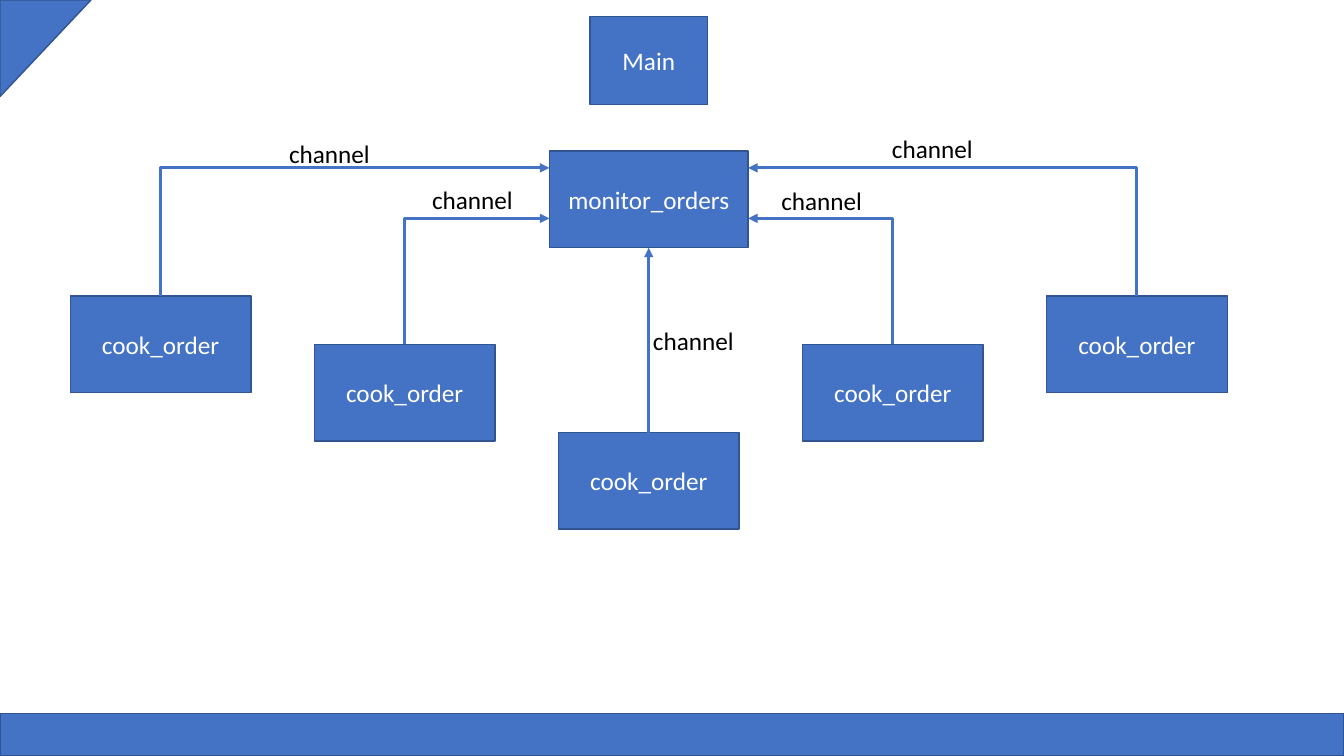
from dataclasses import dataclass

from lxml.etree import SubElement
from pptx import Presentation
from pptx.dml.color import RGBColor
from pptx.enum.shapes import MSO_CONNECTOR as Link, MSO_SHAPE as Kind
from pptx.enum.text import MSO_ANCHOR as Anchor, MSO_AUTO_SIZE as AutoSize, PP_ALIGN as Align
from pptx.oxml.ns import qn
from pptx.shapes.autoshape import Shape
from pptx.shapes.connector import Connector
from pptx.slide import Slide
from pptx.text.text import TextFrame
from pptx.util import Pt


@dataclass(frozen=True)
class Theme:
    fill: RGBColor = RGBColor(0x44, 0x72, 0xC4)
    outline: RGBColor = RGBColor(0x32, 0x54, 0x91)
    light: RGBColor = RGBColor(0xFF, 0xFF, 0xFF)
    dark: RGBColor = RGBColor(0, 0, 0)
    font: str = "Calibri"
    size: float = 18
    outline_width: float = 1
    arrow_width: float = 2.25


@dataclass(frozen=True)
class Box:
    left: float
    top: float
    width: float
    height: float
    text: str = ""
    kind: Kind = Kind.RECTANGLE
    rotation: float = 0

    @property
    def right(self) -> float:
        return self.left + self.width

    @property
    def center(self) -> float:
        return self.left + self.width / 2


@dataclass(frozen=True)
class Label:
    left: float
    top: float
    text: str = "channel"


THEME = Theme()
PAGE_WIDTH, PAGE_HEIGHT = 960, 540
AXIS = 463.4
COOK_WIDTH, COOK_HEIGHT, COOK_STEP = 129, 69, 174.35
COOK_TOPS = (211.5, 246, 309, 246, 211.5)
OUTER_PORT, INNER_PORT = 120, 156


def centered_box(center: float, top: float, width: float, height: float, text: str) -> Box:
    return Box(center - width / 2, top, width, height, text)


FOOTER = Box(0, 509.8, PAGE_WIDTH, 30.2)
CORNER = Box(-2, 2, 69, 65, kind=Kind.RIGHT_TRIANGLE, rotation=90)
MAIN = centered_box(AXIS, 12, 84, 62.5, "Main")
MONITOR = centered_box(AXIS, 108, 142, 69, "monitor_orders")
COOKS = [
    centered_box(AXIS + (index - 2) * COOK_STEP, top, COOK_WIDTH, COOK_HEIGHT, "cook_order")
    for index, top in enumerate(COOK_TOPS)
]
LABELS = [
    Label(199.4, 95),
    Label(301.5, 128),
    Label(630, 92),
    Label(551, 128.5),
    Label(459.3, 228.5),
]


def write_text(frame: TextFrame, text: str, color: RGBColor, align: Align) -> None:
    para = frame.paragraphs[0]
    para.text = text
    para.alignment = align
    para.font.name = THEME.font
    para.font.size = Pt(THEME.size)
    para.font.color.rgb = color


def draw_box(page: Slide, box: Box) -> Shape:
    shape = page.shapes.add_shape(
        box.kind, Pt(box.left), Pt(box.top), Pt(box.width), Pt(box.height)
    )
    shape.rotation = box.rotation
    shape.shadow.inherit = False
    shape.fill.solid()
    shape.fill.fore_color.rgb = THEME.fill
    shape.line.color.rgb = THEME.outline
    shape.line.width = Pt(THEME.outline_width)
    if box.text:
        shape.text_frame.vertical_anchor = Anchor.MIDDLE
        write_text(shape.text_frame, box.text, THEME.light, Align.CENTER)
    return shape


def style_arrow(arrow: Connector) -> None:
    arrow.line.color.rgb = THEME.fill
    arrow.line.width = Pt(THEME.arrow_width)
    properties = arrow.element.spPr
    SubElement(properties.find(qn("a:ln")), qn("a:tailEnd"), type="triangle")
    SubElement(properties, qn("a:effectLst"))


def draw_straight_arrow(page: Slide, source: Shape, target: Shape) -> None:
    arrow = page.shapes.add_connector(Link.STRAIGHT, 0, 0, 0, 0)
    arrow.begin_connect(source, 0)
    arrow.end_connect(target, 2)
    style_arrow(arrow)


def draw_bent_arrow(page: Slide, cook: Box, port: float) -> None:
    from_left = cook.center < MONITOR.center
    target = MONITOR.left if from_left else MONITOR.right
    half_run = abs(target - cook.center) / 2
    half_rise = (cook.top - port) / 2
    middle_x = (cook.center + target) / 2
    middle_y = (cook.top + port) / 2
    side = half_rise if from_left else -half_rise
    arrow = page.shapes.add_connector(
        Link.ELBOW,
        Pt(middle_x + side),
        Pt(middle_y + half_run),
        Pt(middle_x - side),
        Pt(middle_y - half_run),
    )
    properties = arrow.element.spPr
    properties.find(qn("a:xfrm")).set("rot", str((90 if from_left else 270) * 60000))
    properties.find(qn("a:prstGeom")).set("prst", "bentConnector2")
    style_arrow(arrow)


def draw_label(page: Slide, label: Label) -> None:
    frame = page.shapes.add_textbox(Pt(label.left), Pt(label.top), Pt(72.7), Pt(29)).text_frame
    frame.word_wrap = False
    frame.auto_size = AutoSize.SHAPE_TO_FIT_TEXT
    write_text(frame, label.text, THEME.dark, Align.LEFT)


def main() -> None:
    deck = Presentation()
    deck.slide_width, deck.slide_height = Pt(PAGE_WIDTH), Pt(PAGE_HEIGHT)
    page = deck.slides.add_slide(deck.slide_layouts[6])

    for box in (FOOTER, CORNER, MAIN):
        draw_box(page, box)
    cook_shapes = [draw_box(page, cook) for cook in COOKS]
    monitor_shape = draw_box(page, MONITOR)

    ports = (OUTER_PORT, INNER_PORT, INNER_PORT, OUTER_PORT)
    for cook, port in zip(COOKS[:2] + COOKS[3:], ports):
        draw_bent_arrow(page, cook, port)
    draw_straight_arrow(page, cook_shapes[2], monitor_shape)

    for label in LABELS:
        draw_label(page, label)

    deck.save("out.pptx")


if __name__ == "__main__":
    main()
